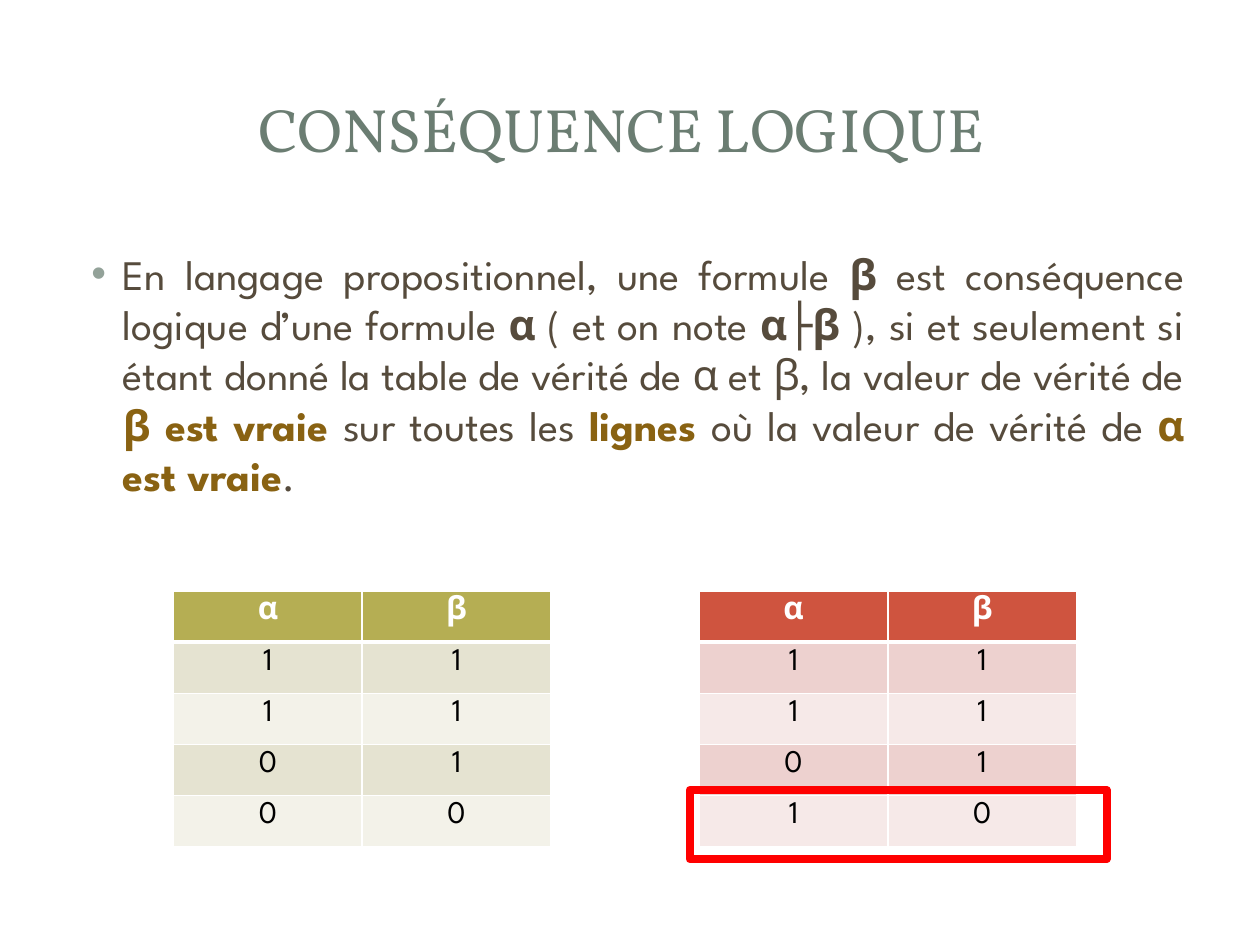
from dataclasses import dataclass

from lxml import etree
from pptx import Presentation
from pptx.dml.color import RGBColor
from pptx.enum.shapes import MSO_SHAPE
from pptx.enum.text import MSO_ANCHOR, MSO_AUTO_SIZE, PP_ALIGN
from pptx.oxml.ns import qn
from pptx.util import Pt

RECTANGLE, ROUNDED = MSO_SHAPE.RECTANGLE, MSO_SHAPE.ROUNDED_RECTANGLE
CENTER, JUSTIFY = PP_ALIGN.CENTER, PP_ALIGN.JUSTIFY
MIDDLE, TOP = MSO_ANCHOR.MIDDLE, MSO_ANCHOR.TOP
NO_AUTOFIT = MSO_AUTO_SIZE.NONE

TITLE_FONT, BODY_FONT = "Vollkorn", "League Spartan"
COLORS = {
    "title": "6B7D72", "body": "564B3C", "accent": "896212", "bullet": "93A299",
    "white": "FFFFFF", "black": "000000", "highlight": "FF0000",
    "green": "B5AE53", "green_dark": "E5E3D1", "green_light": "F3F2E9",
    "red": "CF543F", "red_dark": "EDD1CF", "red_light": "F6E9E8",
}
COL_WIDTH, ROW_HEIGHT, TABLE_TOP = 107.8, 29.25, 337.7


@dataclass
class Span:
    text: str
    bold: bool = False
    color: str = "body"


@dataclass
class TruthTable:
    left: float
    theme: str
    rows: list[str]


@dataclass
class Panel:
    left: float
    top: float
    width: float
    height: float
    kind: MSO_SHAPE = RECTANGLE
    opacity: int = 100


PANELS = [
    Panel(7.2, 7.9, 705.6, 524.9, ROUNDED),
    Panel(21.6, 21.6, 676.8, 104.4, opacity=83),
    Panel(29.5, 29.5, 660.2, 87.8),
]
HIGHLIGHT = Panel(394.1, 451.4, 238.3, 39.6)
DEFINITION = [
    Span("En langage propositionnel, une formule "),
    Span("β", True),
    Span(" est conséquence logique d’une formule "),
    Span("α", True),
    Span(" ( et on note "),
    Span("α├β ", True),
    Span("), si et seulement si étant donné la table de vérité de α et β, "
         "la valeur de vérité de "),
    Span("β est vraie ", True, "accent"),
    Span("sur toutes les "),
    Span("lignes ", True, "accent"),
    Span("où la valeur de vérité de "),
    Span("α est vraie", True, "accent"),
    Span(". "),
]
TABLES = [
    TruthTable(99.2, "green", ["αβ", "11", "11", "01", "00"]),
    TruthTable(399.6, "red", ["αβ", "11", "11", "01", "10"]),
]


def rgb(name: str) -> RGBColor:
    return RGBColor.from_string(COLORS[name])


def write(p, spans: list[Span], font: str, size: float, align) -> None:
    p.alignment = align
    for span in spans:
        r = p.add_run()
        r.text = span.text
        r.font.bold = span.bold
        r.font.color.rgb = rgb(span.color)
    for f in (p.font, *(r.font for r in p.runs)):
        f.name, f.size = font, Pt(size)


def place(s, left: float, top: float, width: float, height: float, anchor):
    s.left, s.top, s.width, s.height = Pt(left), Pt(top), Pt(width), Pt(height)
    tf = s.text_frame
    tf.auto_size, tf.word_wrap, tf.vertical_anchor = NO_AUTOFIT, True, anchor
    return tf.paragraphs[0]


def add_bullet(p, margin: float, indent: float) -> None:
    pPr = p._p.get_or_add_pPr()
    pPr.set("marL", str(Pt(margin)))
    pPr.set("indent", str(Pt(indent)))
    color = etree.Element(qn("a:buClr"))
    etree.SubElement(color, qn("a:srgbClr"), val=COLORS["bullet"])
    font = etree.Element(qn("a:buFont"), typeface="Arial")
    char = etree.Element(qn("a:buChar"), char="•")
    for i, element in enumerate((color, font, char)):
        pPr.insert(i, element)


def add_borders(cell, widths: dict[str, float]) -> None:
    tcPr = cell._tc.get_or_add_tcPr()
    for side, width in widths.items():
        ln = etree.SubElement(tcPr, qn(f"a:ln{side}"), w=str(Pt(width)))
        fill = etree.SubElement(ln, qn("a:solidFill"))
        etree.SubElement(fill, qn("a:srgbClr"), val=COLORS["white"])


def add_truth_table(slide, truth: TruthTable) -> None:
    n = len(truth.rows)
    table = slide.shapes.add_table(
        n, 2, Pt(truth.left), Pt(TABLE_TOP),
        Pt(2 * COL_WIDTH), Pt(n * ROW_HEIGHT)).table
    for column in table.columns:
        column.width = Pt(COL_WIDTH)
    for i, values in enumerate(truth.rows):
        table.rows[i].height = Pt(ROW_HEIGHT)
        header = i == 0
        shade = "" if header else "_dark" if i % 2 else "_light"
        for j, value in enumerate(values):
            cell = table.cell(i, j)
            add_borders(cell, {"L": 1, "R": 1, "T": 3 if i == 1 else 1,
                               "B": 3 if header else 1})
            cell.fill.solid()
            cell.fill.fore_color.rgb = rgb(truth.theme + shade)
            span = Span(value, header, "white" if header else "black")
            write(cell.text_frame.paragraphs[0], [span], BODY_FONT, 18, CENTER)


def add_panel(slide, panel: Panel):
    s = slide.shapes.add_shape(panel.kind, Pt(panel.left), Pt(panel.top),
                               Pt(panel.width), Pt(panel.height))
    s.shadow.inherit = False
    return s


def add_backdrop(slide, panel: Panel, depth: int) -> None:
    s = add_panel(slide, panel)
    s.fill.solid()
    s.fill.fore_color.rgb = rgb("white")
    s.line.fill.background()
    if panel.kind == ROUNDED:
        s.adjustments[0] = 0.017
    if panel.opacity < 100:
        color = s._element.spPr.find(f"{qn('a:solidFill')}/{qn('a:srgbClr')}")
        etree.SubElement(color, qn("a:alpha"), val=str(panel.opacity * 1000))
    slide.shapes._spTree.insert(2 + depth, s._element)


def add_highlight(slide) -> None:
    s = add_panel(slide, HIGHLIGHT)
    s.fill.background()
    s.line.color.rgb = rgb("highlight")
    s.line.width = Pt(4.5)


def main() -> None:
    prs = Presentation()
    prs.slide_width, prs.slide_height = Pt(720), Pt(540)
    slide = prs.slides.add_slide(prs.slide_layouts[1])
    for depth, panel in enumerate(PANELS):
        add_backdrop(slide, panel, depth)

    title = place(slide.shapes.title, 33.8, 32.4, 650, 82, MIDDLE)
    write(title, [Span("CONSÉQUENCE LOGIQUE ", color="title")], TITLE_FONT, 35, CENTER)

    body = place(slide.placeholders[1], 36, 138.2, 648, 344, TOP)
    write(body, DEFINITION, BODY_FONT, 24, JUSTIFY)
    body.space_before = Pt(4.8)
    add_bullet(body, 27, -18)

    for truth in TABLES:
        add_truth_table(slide, truth)
    add_highlight(slide)
    prs.save("out.pptx")


if __name__ == "__main__":
    main()
